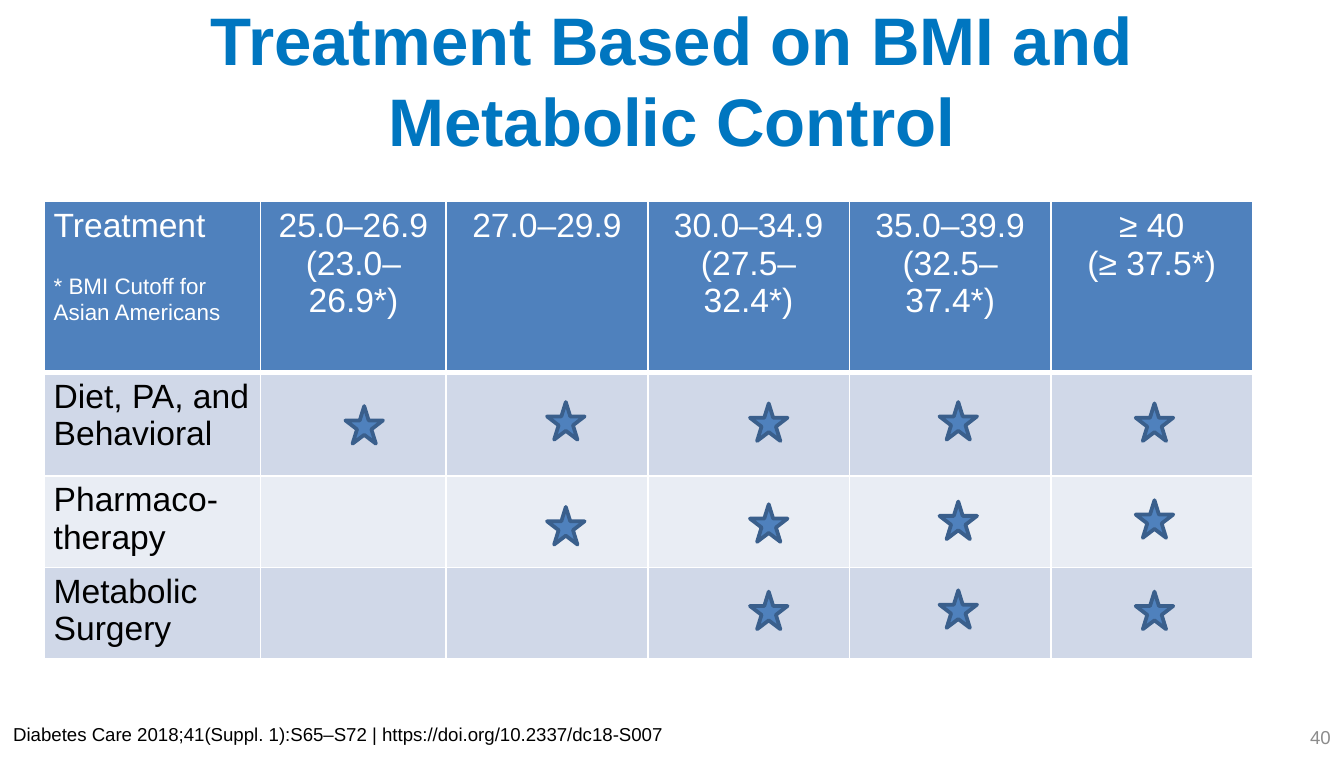
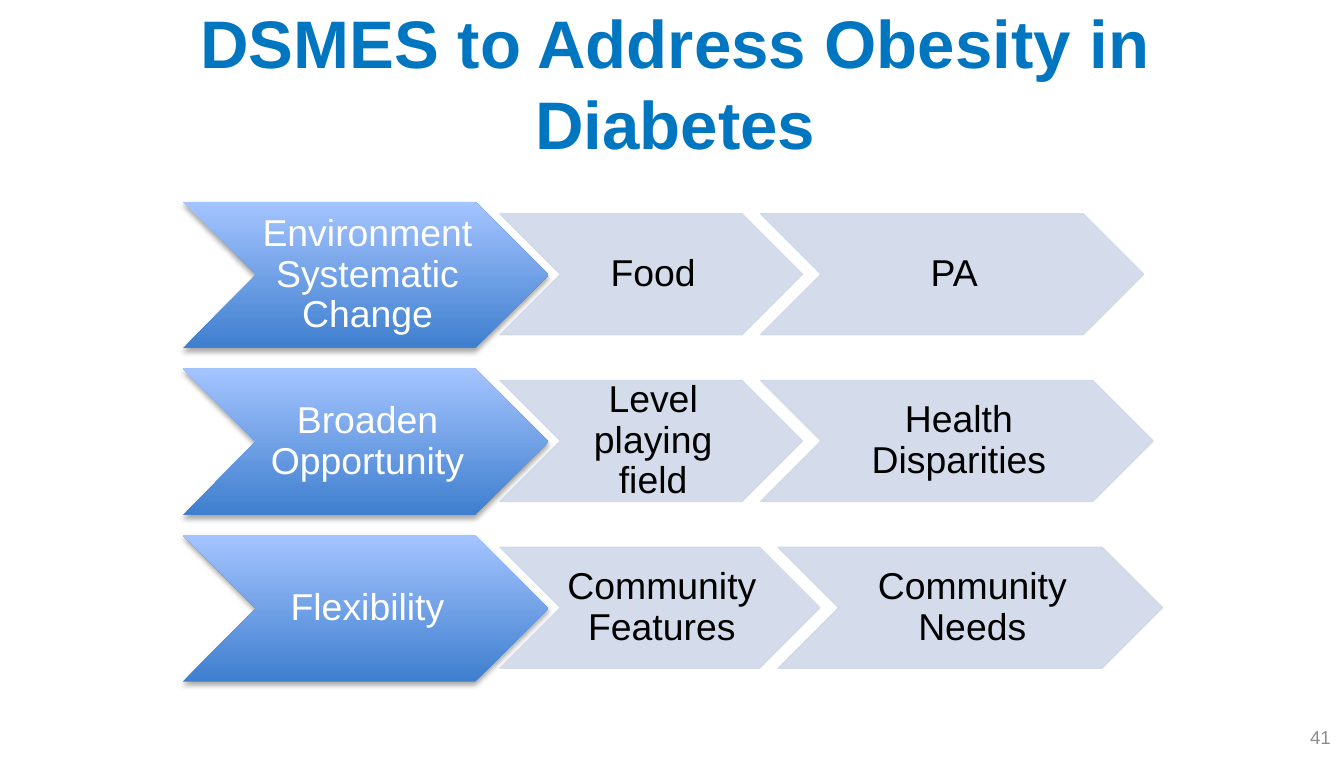
"""Build two slides on obesity treatment: a BMI table and a chevron overview."""
from lxml import etree
from pptx import Presentation
from pptx.dml.color import RGBColor
from pptx.enum.shapes import MSO_SHAPE as Shape
from pptx.enum.text import MSO_ANCHOR as Anchor, PP_ALIGN as Align
from pptx.oxml import parse_xml
from pptx.oxml.ns import nsdecls, qn
from pptx.util import Inches, Pt

TITLE_BLUE = RGBColor(0x00, 0x76, 0xC0)
BLUE = RGBColor(0x4F, 0x81, 0xBD)
STAR_EDGE = RGBColor(0x3A, 0x5F, 0x8C)
PALE_BLUE = RGBColor(0xD0, 0xD8, 0xE8)
PALEST_BLUE = RGBColor(0xE9, 0xED, 0xF4)
GRADIENT_LOW = RGBColor(0x3F, 0x7F, 0xCE)
GRADIENT_HIGH = RGBColor(0xA4, 0xC4, 0xFF)
GREY = RGBColor(0x8C, 0x8C, 0x8C)
WHITE = RGBColor(0xFF, 0xFF, 0xFF)
BLACK = RGBColor(0x00, 0x00, 0x00)
FONT = "Arial"


def write(frame, lines, size, color, bold=False, **layout):
    """Fill a text frame with one paragraph a line."""
    for number, line in enumerate(lines):
        para = frame.paragraphs[0] if number == 0 else frame.add_paragraph()
        for name, value in layout.items():
            setattr(para, name, value)
        span = para.add_run()
        span.text = line
        for name, value in {"name": FONT, "size": Pt(size), "bold": bold}.items():
            setattr(span.font, name, value)
        span.font.color.rgb = color


def add_text(page, place, line, size, color, anchor=Anchor.MIDDLE, wrap=True, **style):
    """Add a text box with one line of text."""
    box = page.shapes.add_textbox(*map(Inches, place))
    for name, value in {"word_wrap": wrap, "vertical_anchor": anchor}.items():
        setattr(box.text_frame, name, value)
    write(box.text_frame, [line], size, color, **style)


deck = Presentation()
deck.slide_width, deck.slide_height = Inches(10), Inches(5.63)

titles = [
    ((0.5, 0.24, 9, 0.7), "Treatment Based on BMI and Metabolic Control", "40"),
    ((0.31, 0.26, 9.43, 0.7), "DSMES to Address Obesity in Diabetes", "41"),
]
pages = []
for place, title, number in titles:
    page = deck.slides.add_slide(deck.slide_layouts[6])
    add_text(page, place, title, 36, TITLE_BLUE, bold=True, alignment=Align.CENTER)
    add_text(page, (7.67, 5.33, 2.33, 0.3), number, 10, GREY, alignment=Align.RIGHT)
    pages.append(page)
table_page, chevron_page = pages

headings = [
    ["Treatment", "* BMI Cutoff for Asian Americans"],
    ["25.0–26.9", "(23.0–26.9*)"],
    ["27.0–29.9"],
    ["30.0–34.9", "(27.5–32.4*)"],
    ["35.0–39.9", "(32.5–37.4*)"],
    ["≥ 40", "(≥ 37.5*)"],
]
treatments = ["Diet, PA, and Behavioral", "Pharmaco-therapy", "Metabolic Surgery"]
column_widths = [1.61, 1.38, 1.5, 1.5, 1.5, 1.5]
row_heights = [1.27, 0.77, 0.68, 0.68]
row_fills = [BLUE, PALE_BLUE, PALEST_BLUE, PALE_BLUE]

table = table_page.shapes.add_table(
    len(row_heights), len(column_widths),
    Inches(0.33), Inches(1.5), Inches(8.98), Inches(3.4)).table
for column, width in zip(table.columns, column_widths):
    column.width = Inches(width)
for row, height in zip(table.rows, row_heights):
    row.height = Inches(height)

cell_margins = {"margin_left": 0.07, "margin_right": 0.07,
                "margin_top": 0.04, "margin_bottom": 0.04}
for row_number, row in enumerate(table.rows):
    thick_side = {0: "lnB", 1: "lnT"}.get(row_number)
    for cell in row.cells:
        for name, value in cell_margins.items():
            setattr(cell, name, Inches(value))
        for side in ("lnL", "lnR", "lnT", "lnB"):
            width = Pt(3 if side == thick_side else 1)
            cell._tc.get_or_add_tcPr().append(parse_xml(
                f'<a:{side} {nsdecls("a")} w="{width}"><a:solidFill>'
                f'<a:srgbClr val="{WHITE}"/></a:solidFill></a:{side}>'))
        cell.fill.solid()
        cell.fill.fore_color.rgb = row_fills[row_number]

for number, lines in enumerate(headings):
    align = Align.CENTER if number else Align.LEFT
    write(table.cell(0, number).text_frame, lines, 18, WHITE, alignment=align)
note = table.cell(0, 0).text_frame.paragraphs[1]
note.space_before = Pt(16)
note.runs[0].font.size = Pt(12)
for number, treatment in enumerate(treatments, 1):
    write(table.cell(number, 0).text_frame, [treatment], 18, BLACK)

star_columns = {
    2.57: [3.02],
    4.07: [2.99, 3.77],
    5.58: [3, 3.75, 4.4],
    6.99: [2.99, 3.73, 4.39],
    8.45: [3, 3.72, 4.4],
}
for left, tops in star_columns.items():
    for top in tops:
        star = table_page.shapes.add_shape(
            Shape.STAR_5_POINT, Inches(left), Inches(top), Inches(0.28), Inches(0.28))
        star.shadow.inherit = False
        star.fill.solid()
        star.fill.fore_color.rgb = BLUE
        star.line.color.rgb = STAR_EDGE
        star.line.width = Pt(2)

add_text(table_page, (0, 5.33, 5.06, 0.27),
         "Diabetes Care 2018;41(Suppl. 1):S65–S72 | https://doi.org/10.2337/dc18-S007",
         10, BLACK, anchor=Anchor.TOP, wrap=False)

chevron_rows = [
    [("Environment Systematic Change", 2.72), ("Food", 2.25), ("PA", 2.85)],
    [("Broaden Opportunity", 2.72), ("Level playing field", 2.25), ("Health Disparities", 2.92)],
    [("Flexibility", 2.72), ("Community Features", 2.38), ("Community Needs", 2.86)],
]
chevron_margins = {"margin_left": 0.03, "margin_right": 0,
                   "margin_top": 0.01, "margin_bottom": 0.01}
for row_number, row in enumerate(chevron_rows):
    left = 1.36
    for step, (label, width) in enumerate(row):
        is_lead = step == 0
        height, inset, overlap = (1.09, 0, 0.36) if is_lead else (0.9, 0.09, 0.31)
        top = 1.5 + 1.24 * row_number + inset
        chevron = chevron_page.shapes.add_shape(
            Shape.CHEVRON, Inches(left), Inches(top), Inches(width), Inches(height))
        left += width - overlap
        chevron.shadow.inherit = False
        if is_lead:
            chevron.fill.gradient()
            chevron.fill.gradient_angle = 90
            for stop, color, position in zip(
                    chevron.fill.gradient_stops, (GRADIENT_LOW, GRADIENT_HIGH), (0, 1)):
                stop.color.rgb = color
                stop.position = position
            chevron.line.fill.background()
            chevron._element.spPr.find(qn("a:effectLst")).append(parse_xml(
                f'<a:outerShdw {nsdecls("a")} blurRad="{Pt(3.1)}" dist="{Pt(1.8)}" '
                f'dir="5400000" rotWithShape="0"><a:srgbClr val="{BLACK}">'
                '<a:alpha val="35000"/></a:srgbClr></a:outerShdw>'))
        else:
            chevron.fill.solid()
            chevron.fill.fore_color.rgb = PALE_BLUE
            chevron.line.color.rgb = PALE_BLUE
            chevron.line.width = Pt(0.75)
            for color in chevron._element.spPr.iter(qn("a:srgbClr")):
                etree.SubElement(color, qn("a:alpha"), val="90000")
        frame = chevron.text_frame
        for name, value in chevron_margins.items():
            setattr(frame, name, Inches(value))
        frame.word_wrap = True
        frame.vertical_anchor = Anchor.MIDDLE
        write(frame, [label], 20, WHITE if is_lead else BLACK,
              alignment=Align.CENTER, line_spacing=0.9)

deck.save("out.pptx")
